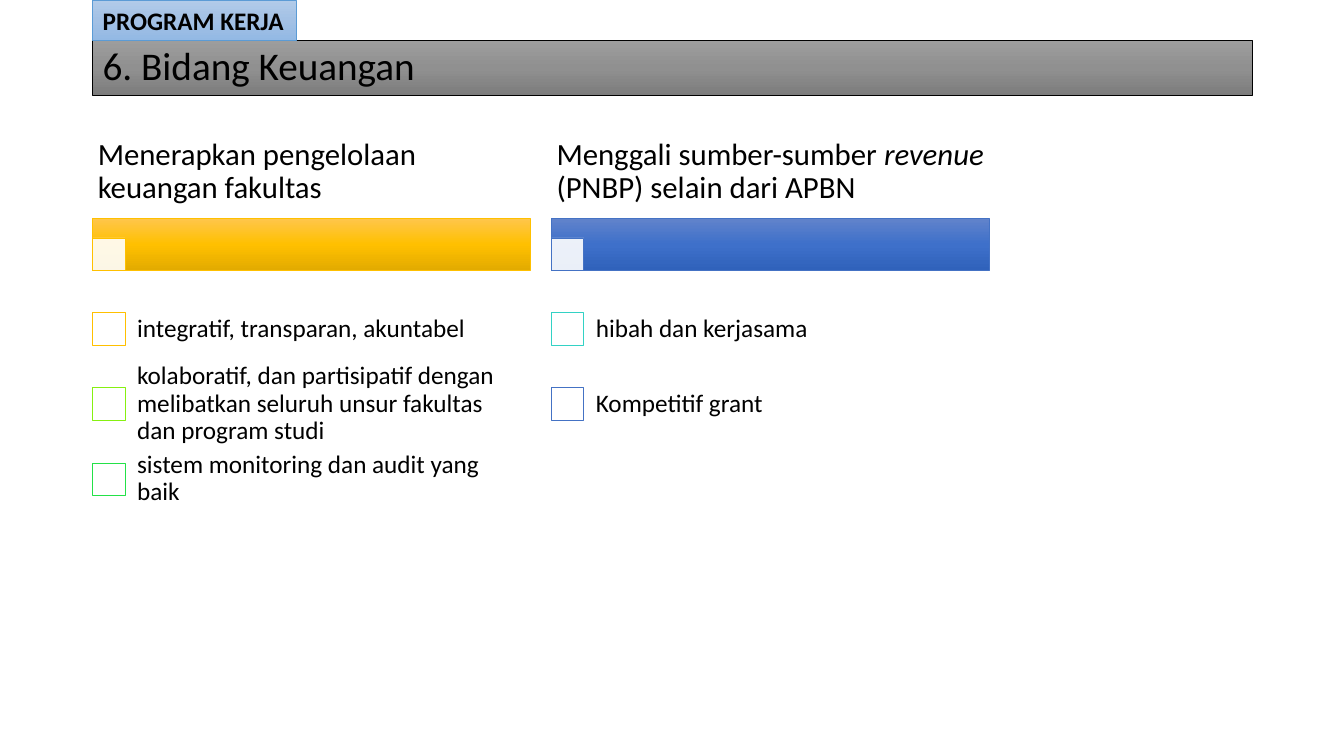
from copy import deepcopy
from dataclasses import dataclass

from pptx import Presentation
from pptx.dml.color import RGBColor
from pptx.enum.shapes import MSO_SHAPE as Shape
from pptx.enum.text import MSO_ANCHOR as Anchor, MSO_AUTO_SIZE as AutoSize
from pptx.oxml.ns import qn
from pptx.util import Inches, Pt
from lxml.etree import SubElement


@dataclass(frozen=True)
class Theme:
    font: str = "Calibri"
    text: str = "000000"
    white: str = "FFFFFF"
    title_size: int = 28
    heading_size: int = 22
    body_size: int = 18
    line_width: float = 0.5
    line_spacing: float = 0.9
    grey: tuple = ("9D9D9D", "909090", "7C7C7C")
    sky: tuple = ("B1CBE9", "A3C1E5", "93B9E4")
    sky_line: str = "5B9BD5"
    gold: tuple = ("FFC64B", "FFC000", "E3AB00")
    gold_line: str = "FFC000"
    blue: tuple = ("6183CB", "3E70CA", "3062BB")
    blue_line: str = "4472C4"
    lime: str = "86F011"
    green: str = "23E148"
    teal: str = "33D2C5"


THEME = Theme()
LEFT = 0.92
COLUMN_WIDTH = 4.34
COLUMN_STEP = 4.55
BAR_TOP, BAR_HEIGHT = 0.92, 0.51
SQUARE = 0.32
ROW_TOP, ROW_HEIGHT = 1.64, 0.745
ITEM_INDENT = 0.3

COLUMNS = [
    ([("Menerapkan pengelolaan keuangan fakultas", False)],
     THEME.gold, THEME.gold_line,
     [("integratif, transparan, akuntabel", THEME.gold_line),
      ("kolaboratif, dan partisipatif dengan melibatkan seluruh unsur "
       "fakultas dan program studi", THEME.lime),
      ("sistem monitoring dan audit yang baik", THEME.green)]),
    ([("Menggali sumber-sumber ", False), ("revenue", True),
      (" (PNBP) selain dari APBN", False)],
     THEME.blue, THEME.blue_line,
     [("hibah dan kerjasama", THEME.teal),
      ("Kompetitif grant", THEME.blue_line)]),
]


def add_rectangle(shapes, box, line):
    rectangle = shapes.add_shape(Shape.RECTANGLE, *map(Inches, box))
    rectangle.shadow.inherit = False
    rectangle.line.color.rgb = RGBColor.from_string(line)
    rectangle.line.width = Pt(THEME.line_width)
    return rectangle


def add_gradient_bar(shapes, box, colours, line):
    """Draw a rectangle shaded from top to bottom in three colours."""
    bar = add_rectangle(shapes, box, line)
    bar.fill.gradient()
    bar.fill.gradient_angle = 270
    stop_list = bar.fill._fill._gradFill.find(qn("a:gsLst"))
    stop_list.insert(1, deepcopy(stop_list[0]))
    for stop, position, colour in zip(bar.fill.gradient_stops, (0, 0.5, 1), colours):
        stop.position = position
        stop.color.rgb = RGBColor.from_string(colour)
    return bar


def add_square(shapes, left, top, line, opacity=100):
    square = add_rectangle(shapes, (left, top, SQUARE, SQUARE), line)
    square.fill.solid()
    square.fill.fore_color.rgb = RGBColor.from_string(THEME.white)
    if opacity < 100:
        colour = square.fill._xPr.find(qn("a:solidFill"))[0]
        SubElement(colour, qn("a:alpha")).set("val", str(opacity * 1000))


def write_text(shape, runs, size, margins=(0.1, 0.05), spacing=THEME.line_spacing,
               bold=False):
    """Fill a shape with one paragraph of (text, italic) runs."""
    frame = shape.text_frame
    frame.word_wrap = True
    frame.vertical_anchor = Anchor.MIDDLE
    frame.margin_left = frame.margin_right = Inches(margins[0])
    frame.margin_top = frame.margin_bottom = Inches(margins[1])
    para = frame.paragraphs[0]
    para.alignment = 1
    para.line_spacing = spacing
    for text, italic in runs:
        run = para.add_run()
        run.text = text
        run.font.name = THEME.font
        run.font.size = Pt(size)
        run.font.bold = bold
        run.font.italic = italic
        run.font.color.rgb = RGBColor.from_string(THEME.text)
    return frame


def add_header(page, left, top, width):
    title = add_gradient_bar(page.shapes, (left, top + 0.4, width, 0.55),
                             THEME.grey, THEME.text)
    write_text(title, [("6. Bidang Keuangan", False)], THEME.title_size)
    tag = add_gradient_bar(page.shapes, (left, top, 2.02, 0.4),
                           THEME.sky, THEME.sky_line)
    frame = write_text(tag, [("PROGRAM KERJA", False)], THEME.body_size,
                       spacing=1.0, bold=True)
    frame.vertical_anchor = Anchor.TOP
    frame.word_wrap = False
    frame.auto_size = AutoSize.SHAPE_TO_FIT_TEXT


def add_column(shapes, left, top, heading, colours, line, items):
    """Place a heading, its colour bar and a list of boxed items."""
    bar_top = top + BAR_TOP
    add_gradient_bar(shapes, (left, bar_top, COLUMN_WIDTH, BAR_HEIGHT), colours, line)
    add_square(shapes, left, bar_top + BAR_HEIGHT - SQUARE, line, opacity=90)
    box = shapes.add_textbox(*map(Inches, (left, top, COLUMN_WIDTH, BAR_TOP)))
    write_text(box, heading, THEME.heading_size, margins=(0.05, 0.03))
    for index, (text, square_line) in enumerate(items):
        row_top = top + ROW_TOP + index * ROW_HEIGHT
        add_square(shapes, left, row_top + (ROW_HEIGHT - SQUARE) / 2, square_line)
        box = shapes.add_textbox(*map(Inches, (
            left + ITEM_INDENT, row_top, COLUMN_WIDTH - ITEM_INDENT, ROW_HEIGHT)))
        write_text(box, [(text, False)], THEME.body_size, margins=(0.14, 0.14))


def main():
    deck = Presentation()
    deck.slide_width, deck.slide_height = Inches(13.33), Inches(7.5)
    page = deck.slides.add_slide(deck.slide_layouts[6])
    add_header(page, LEFT, 0, 11.5)
    group = page.shapes.add_group_shape()
    for index, column in enumerate(COLUMNS):
        add_column(group.shapes, LEFT + index * COLUMN_STEP, 1.25, *column)
    deck.save("out.pptx")


if __name__ == "__main__":
    main()
